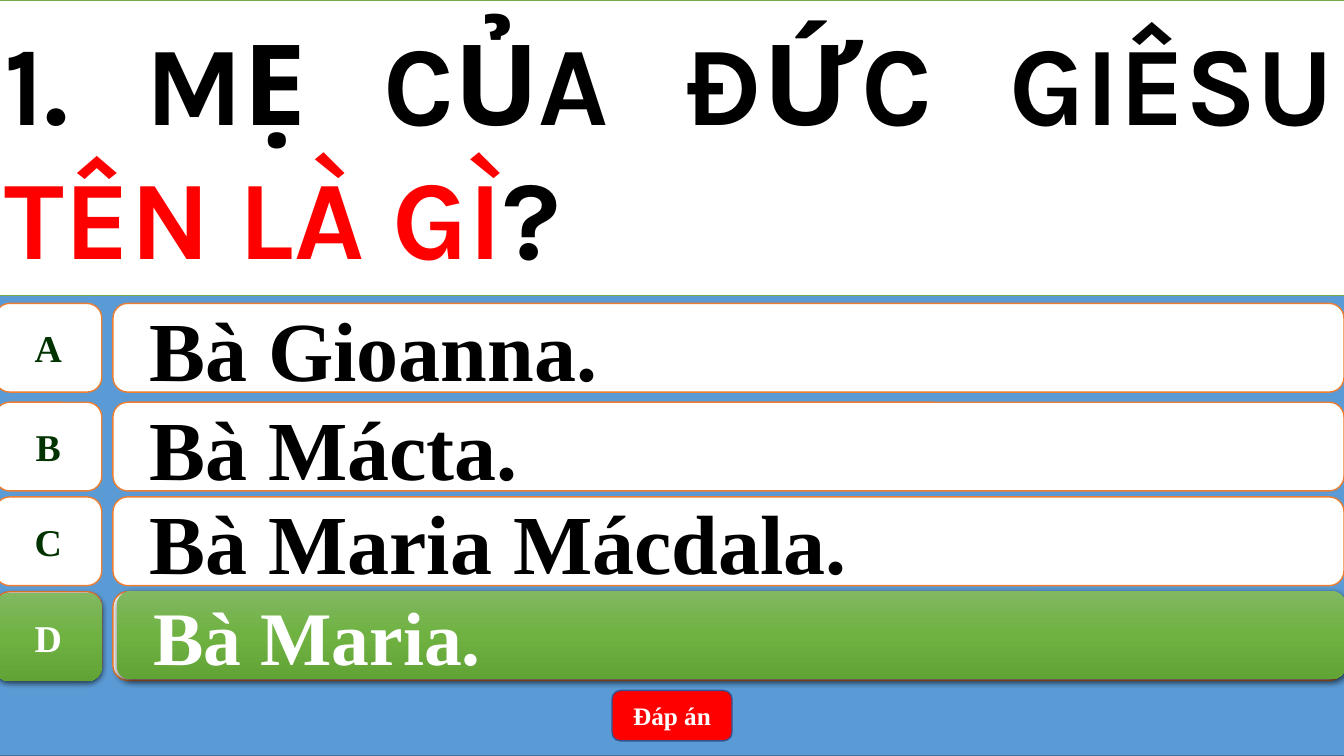
import pptx
import pptx.dml.color
import pptx.enum.shapes
import pptx.enum.text
import pptx.oxml
import pptx.oxml.ns
import pptx.util
from pptx.util import Inches

SHAPE = pptx.enum.shapes.MSO_SHAPE
ALIGN = pptx.enum.text.PP_ALIGN
SERIF = "Times New Roman"
LEFT, WIDTH = -0.05, 13.39
ROW_HEIGHT = 0.88
ANSWERS = [
    ("A", "Bà Gioanna.", 3.01, 60),
    ("B", "Bà Mácta.", 3.99, 60),
    ("C", "Bà Maria Mácdala.", 4.93, 60),
    ("D", "Bà Maria.", 5.87, 54),
]
GREEN_STOPS = [(0, "81B861"), (50, "6FB242"), (100, "62A336")]


def color(value):
    """Turn a hex string into a colour."""
    return pptx.dml.color.RGBColor.from_string(value)


def add_box(slide, kind, box, fill, line):
    """Add a flat shape in the box (left, top, width, height)."""
    shape = slide.shapes.add_shape(kind, *map(Inches, box))
    shape.shadow.inherit = False
    shape.fill.solid()
    shape.fill.fore_color.rgb = color(fill)
    shape.line.color.rgb = color(line)
    shape.line.width = pptx.util.Pt(1)
    return shape


def add_text(shape, runs, size, font, alignment, wrap=True):
    """Write bold runs of (text, colour) in the vertical middle of a shape."""
    frame = shape.text_frame
    frame.word_wrap = wrap
    frame.vertical_anchor = pptx.enum.text.MSO_ANCHOR.MIDDLE
    paragraph = frame.paragraphs[0]
    paragraph.alignment = alignment
    paragraph.font.size = pptx.util.Pt(size)
    paragraph.font.name = font
    paragraph.font.bold = True
    for text, run_color in runs:
        run = paragraph.add_run()
        run.text = text
        run.font.color.rgb = color(run_color)
    return paragraph


def highlight(shape):
    """Give a shape the green gradient and shadow of the right answer."""
    shape.line.fill.background()
    shape.fill.gradient()
    shape.fill.gradient_angle = 270
    qn, namespace = pptx.oxml.ns.qn, pptx.oxml.ns.nsdecls("a")
    properties = shape.element.spPr
    stops = properties.find(".//" + qn("a:gsLst"))
    for stop in list(stops):
        stops.remove(stop)
    for position, value in GREEN_STOPS:
        stops.append(pptx.oxml.parse_xml(
            f'<a:gs {namespace} pos="{position * 1000}"><a:srgbClr val="{value}"/></a:gs>'))
    properties.find(qn("a:effectLst")).append(pptx.oxml.parse_xml(
        f'<a:outerShdw {namespace} blurRad="57150" dist="19050" dir="5400000" algn="ctr" '
        'rotWithShape="0"><a:srgbClr val="000000"><a:alpha val="63000"/></a:srgbClr>'
        '</a:outerShdw>'))


def add_answer(slide, letter_box, answer_box, letter, answer, size, correct=False):
    """Add one answer row: a letter tile and its answer bar."""
    tile = add_box(slide, SHAPE.FLOWCHART_ALTERNATE_PROCESS, letter_box, "FFFFFF", "ED7D31")
    bar = add_box(slide, SHAPE.ROUNDED_RECTANGLE, answer_box, "FFFFFF", "ED7D31")
    letter_color, answer_color = ("FFFFFF", "FFFFFF") if correct else ("003300", "000000")
    add_text(tile, [(letter, letter_color)], 27, SERIF, ALIGN.CENTER, wrap=False)
    paragraph = add_text(bar, [(answer, answer_color)], size, SERIF, ALIGN.LEFT)
    paragraph.level = 1
    indents = paragraph._p.get_or_add_pPr()
    indents.set("marL", str(Inches(0.5)))
    indents.set("indent", str(Inches(-0.28)))
    if correct:
        highlight(tile)
        highlight(bar)


def add_button(slide, box):
    """Add the red button that reveals the answer."""
    button = add_box(slide, SHAPE.ROUNDED_RECTANGLE, box, "FF0000", "325491")
    add_text(button, [("Đáp án", "FFFFFF")], 18, SERIF, ALIGN.CENTER)


def add_question(slide, box):
    """Add the question panel."""
    panel = add_box(slide, SHAPE.RECTANGLE, box, "FFFFFF", "70AD47")
    runs = [("1. MẸ CỦA ĐỨC GIÊSU ", "000000"), ("TÊN LÀ GÌ", "FF0000"), ("? ", "000000")]
    add_text(panel, runs, 80, "Karla", ALIGN.JUSTIFY)


def main():
    """Build the quiz slide and save it."""
    presentation = pptx.Presentation()
    presentation.slide_width = Inches(13.33)
    presentation.slide_height = Inches(7.5)
    slide = presentation.slides.add_slide(presentation.slide_layouts[6])
    add_box(slide, SHAPE.RECTANGLE, (LEFT, 0, WIDTH, 7.5), "5B9BD5", "43739E")
    for letter, answer, top, size in ANSWERS:
        add_answer(slide, (LEFT, top, 1.06, ROW_HEIGHT), (1.12, top, 12.21, ROW_HEIGHT),
                   letter, answer, size)
    letter, answer, top, size = ANSWERS[-1]
    add_answer(slide, (LEFT, top + 0.01, 1.06, ROW_HEIGHT),
               (1.16, top - 0.01, 12.19, ROW_HEIGHT), letter, answer, size, correct=True)
    add_button(slide, (6.07, 6.85, 1.19, 0.5))
    add_question(slide, (LEFT, 0, WIDTH, 2.93))
    presentation.save("out.pptx")


if __name__ == "__main__":
    main()
